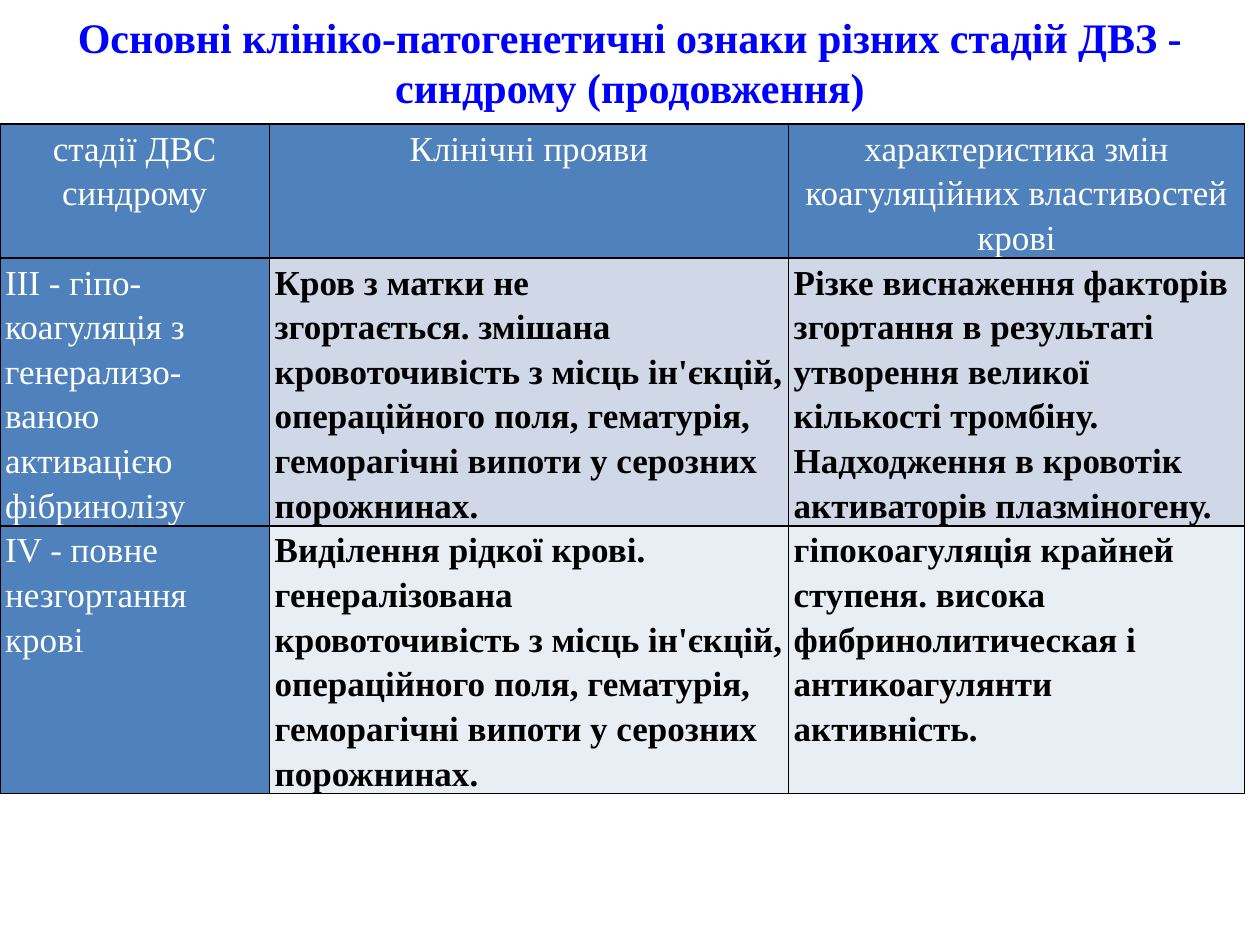
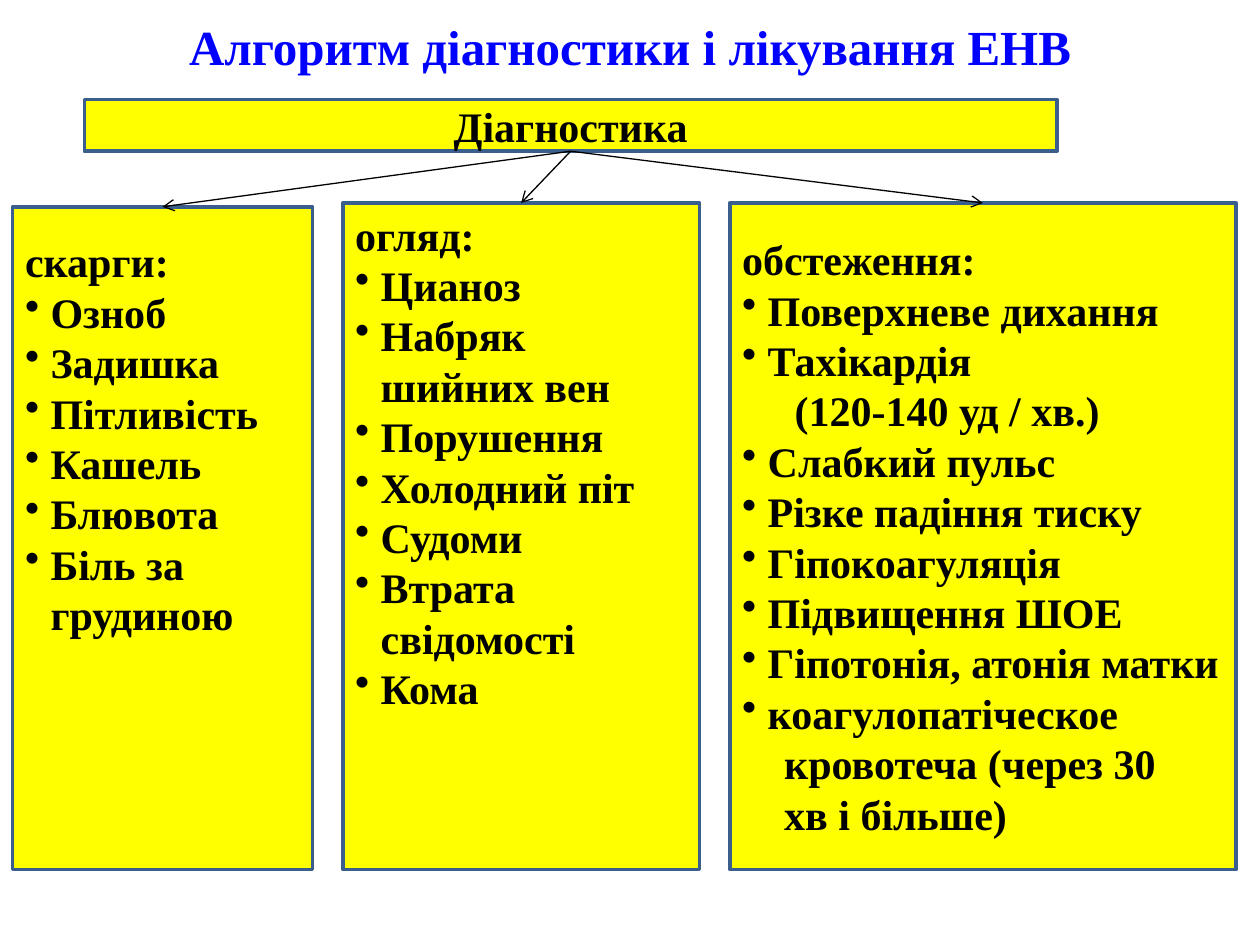
from dataclasses import dataclass

from lxml.etree import SubElement
from pptx import Presentation
from pptx.dml.color import RGBColor
from pptx.enum.shapes import MSO_CONNECTOR, MSO_SHAPE
from pptx.enum.text import MSO_ANCHOR, PP_ALIGN
from pptx.oxml.ns import qn
from pptx.util import Pt

# Shared style
FONT = "Times New Roman"
COLORS = {
    "title": "0000FF",
    "header": "4F81BD",
    "stage_three": "D0D8E8",
    "stage_four": "E9EDF4",
    "box": "FFFF00",
    "outline": "3A5F8C",
    "dark": "000000",
    "light": "FFFFFF",
}
BULLET_INDENT = 14.6
TOP_SITE, BOTTOM_SITE = 0, 2


@dataclass
class Line:
    text: str
    bullet: bool = False
    indent: float = 0


@dataclass
class Box:
    left: float
    top: float
    width: float
    height: float


@dataclass
class Findings:
    heading: str
    lines: list[Line]
    width: float
    top: float
    inset: float


def rgb(name: str) -> RGBColor:
    return RGBColor.from_string(COLORS[name])


def bullets(*items: str) -> list[Line]:
    return [Line(item, bullet=True) for item in items]


def write(frame, lines, *, size=24, color="dark", bold=True,
          align=PP_ALIGN.LEFT, spacing=None) -> None:
    """Fill a text frame with one paragraph per line."""
    frame.word_wrap = True
    for number, line in enumerate(lines):
        line = Line(line) if isinstance(line, str) else line
        paragraph = frame.paragraphs[0] if number == 0 else frame.add_paragraph()
        paragraph.alignment = align
        if spacing:
            paragraph.line_spacing = spacing
        run = paragraph.add_run()
        run.text = line.text
        run.font.name = FONT
        run.font.size = Pt(size)
        run.font.bold = bold
        run.font.color.rgb = rgb(color)
        properties = paragraph._p.get_or_add_pPr()
        if line.bullet:
            properties.set("marL", str(Pt(BULLET_INDENT)))
            properties.set("indent", str(-Pt(BULLET_INDENT)))
            SubElement(properties, qn("a:buChar"), char="•")
        elif line.indent:
            properties.set("marL", str(Pt(line.indent)))


def add_title(slide, text: str, top: float, height: float, size: float) -> None:
    title = slide.shapes.add_textbox(Pt(0), Pt(top), Pt(720), Pt(height))
    write(title.text_frame, [text], size=size, color="title", align=PP_ALIGN.CENTER)


def add_box(slide, box: Box):
    shape = slide.shapes.add_shape(MSO_SHAPE.FLOWCHART_PROCESS, Pt(box.left),
                                   Pt(box.top), Pt(box.width), Pt(box.height))
    shape.shadow.inherit = False
    shape.fill.solid()
    shape.fill.fore_color.rgb = rgb("box")
    shape.line.color.rgb = rgb("outline")
    shape.line.width = Pt(2)
    return shape


def add_arrow(slide, source, target) -> None:
    arrow = slide.shapes.add_connector(MSO_CONNECTOR.STRAIGHT, 0, 0, 0, 0)
    arrow.begin_connect(source, BOTTOM_SITE)
    arrow.end_connect(target, TOP_SITE)
    arrow.line.color.rgb = rgb("dark")
    arrow.line.width = Pt(0.75)
    SubElement(arrow.line._get_or_add_ln(), qn("a:tailEnd"), type="arrow")
    SubElement(arrow._element.spPr, qn("a:effectLst"))


def style_cell(cell, fill: str) -> None:
    cell.margin_left = cell.margin_right = Pt(3)
    cell.margin_top = cell.margin_bottom = Pt(0)
    properties = cell._tc.get_or_add_tcPr()
    for side in ("lnL", "lnR", "lnT", "lnB"):
        border = SubElement(properties, qn(f"a:{side}"), w=str(Pt(1)))
        paint = SubElement(border, qn("a:solidFill"))
        SubElement(paint, qn("a:srgbClr"), val=COLORS["dark"])
    cell.fill.solid()
    cell.fill.fore_color.rgb = rgb(fill)


# Stage table: rows of cells, each cell a list of paragraphs
STAGE_COLUMNS = [154, 296.6, 260.6]
STAGE_ROWS = [76.5, 153, 153]
STAGE_FILLS = ["header", "stage_three", "stage_four"]
STAGES = [
    [
        ["стадії ДВС", "синдрому"],
        ["Клінічні прояви"],
        ["характеристика змін", "коагуляційних властивостей", "крові"],
    ],
    [
        ["III - гіпо-коагуляція з генерализо-ваною", "активацією", "фібринолізу"],
        ["Кров з матки не", "згортається. змішана",
         "кровоточивість з місць ін'єкцій, операційного поля, гематурія, "
         "геморагічні випоти у серозних порожнинах."],
        ["Різке виснаження факторів", "згортання в результаті",
         "утворення великої кількості тромбіну. Надходження в кровотік "
         "активаторів плазміногену."],
    ],
    [
        ["IV - повне", "незгортання крові"],
        ["Виділення рідкої крові. генералізована",
         "кровоточивість з місць ін'єкцій, операційного поля, гематурія, "
         "геморагічні випоти у серозних порожнинах."],
        ["гіпокоагуляція крайней", "ступеня. висока", "фибринолитическая і",
         "антикоагулянти активність."],
    ],
]

# Diagnostic branches, from left to right
BRANCH_LEFT, BRANCH_GAP, BRANCH_BOTTOM = 7.2, 17.3, 496.8
BRANCHES = [
    Findings("скарги:",
             bullets("Озноб", "Задишка", "Пітливість", "Кашель", "Блювота",
                     "Біль за грудиною"),
             width=171.4, top=118.2, inset=16.6),
    Findings("огляд:",
             bullets("Цианоз", "Набряк шийних вен", "Порушення", "Холодний піт",
                     "Судоми", "Втрата свідомості", "Кома"),
             width=203.8, top=116, inset=3.6),
    Findings("обстеження:",
             bullets("Поверхневе дихання", "Тахікардія")
             + [Line("(120-140 уд / хв.)", indent=30)]
             + bullets("Слабкий пульс", "Різке падіння тиску", "Гіпокоагуляція",
                       "Підвищення ШОЕ", "Гіпотонія, атонія матки",
                       "коагулопатіческое")
             + [Line("кровотеча (через 30", indent=24),
                Line("хв і більше)", indent=24)],
             width=289.4, top=116, inset=17.6),
]


def build_stages(slide) -> None:
    table = slide.shapes.add_table(len(STAGE_ROWS), len(STAGE_COLUMNS), Pt(0), Pt(70.8),
                                   Pt(sum(STAGE_COLUMNS)), Pt(sum(STAGE_ROWS))).table
    for column, width in zip(table.columns, STAGE_COLUMNS):
        column.width = Pt(width)
    for row, (cells, height) in enumerate(zip(STAGES, STAGE_ROWS)):
        table.rows[row].height = Pt(height)
        for column, lines in enumerate(cells):
            cell = table.cell(row, column)
            is_label = row == 0 or column == 0
            style_cell(cell, "header" if is_label else STAGE_FILLS[row])
            write(cell.text_frame, lines, size=20, bold=not is_label, spacing=1.15,
                  color="light" if is_label else "dark",
                  align=PP_ALIGN.LEFT if row else PP_ALIGN.CENTER)
    add_title(slide, "Основні клініко-патогенетичні ознаки різних стадій ДВЗ - "
                     "синдрому (продовження)", top=2.9, height=65.5, size=24)


def build_algorithm(slide) -> None:
    add_title(slide, "Алгоритм діагностики і лікування ЕНВ", top=5.8, height=41, size=28)
    diagnostics = add_box(slide, Box(48.2, 56.9, 555.8, 29.5))
    diagnostics.text_frame.vertical_anchor = MSO_ANCHOR.MIDDLE
    write(diagnostics.text_frame, ["Діагностика"], align=PP_ALIGN.CENTER)

    left = BRANCH_LEFT
    for findings in BRANCHES:
        branch = add_box(slide, Box(left, findings.top, findings.width,
                                    BRANCH_BOTTOM - findings.top))
        branch.text_frame.vertical_anchor = MSO_ANCHOR.TOP
        branch.text_frame.margin_top = Pt(findings.inset)
        write(branch.text_frame, [findings.heading, *findings.lines])
        add_arrow(slide, diagnostics, branch)
        left += findings.width + BRANCH_GAP


def main() -> None:
    deck = Presentation()
    deck.slide_width, deck.slide_height = Pt(720), Pt(540)
    for build in (build_stages, build_algorithm):
        build(deck.slides.add_slide(deck.slide_layouts[6]))
    deck.save("out.pptx")


if __name__ == "__main__":
    main()
